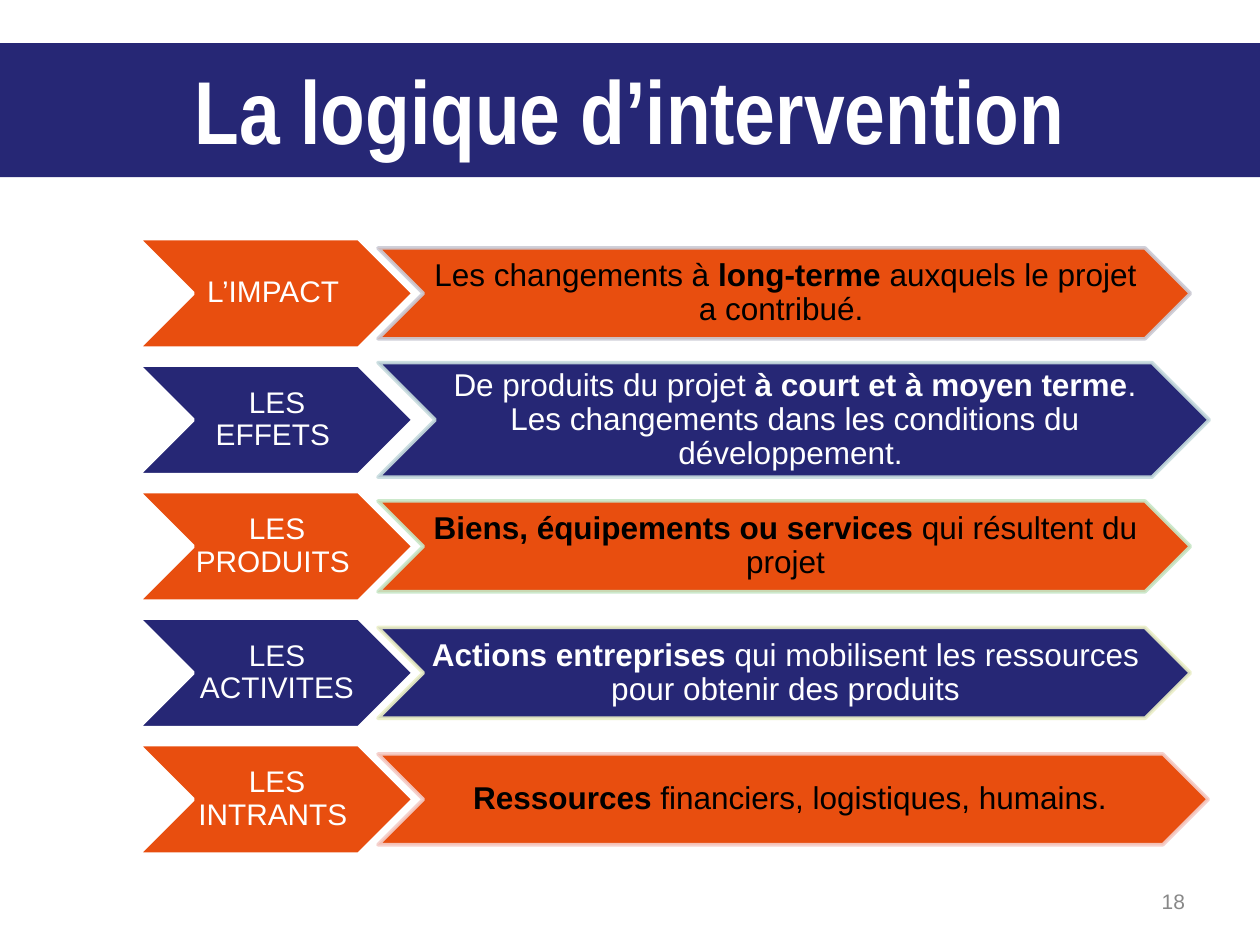
"""Build the slide on the logic of intervention with its five levels of chevrons."""
import pptx
import pptx.dml.color
import pptx.enum.shapes
import pptx.enum.text
import pptx.oxml.ns
import pptx.util
from lxml import etree

Cm = pptx.util.Cm
Pt = pptx.util.Pt
RGBColor = pptx.dml.color.RGBColor
ALIGN = pptx.enum.text.PP_ALIGN
ANCHOR = pptx.enum.text.MSO_ANCHOR

NAVY = RGBColor(0x26, 0x27, 0x75)
ORANGE = RGBColor(0xE8, 0x4E, 0x0F)
WHITE = RGBColor(0xFF, 0xFF, 0xFF)
BLACK = RGBColor(0x00, 0x00, 0x00)
GREY = RGBColor(0x88, 0x88, 0x88)
LILAC = RGBColor(0xCB, 0xCB, 0xD5)
TEAL = RGBColor(0xC7, 0xDC, 0xDE)
GREEN = RGBColor(0xC7, 0xE7, 0xC7)
YELLOW = RGBColor(0xEB, 0xEF, 0xC7)
PINK = RGBColor(0xF5, 0xCD, 0xC8)

LABEL_TOP, LABEL_HEIGHT, ROW_STEP = 4.81, 2.21, 2.55

LEVELS = [
    ("L’IMPACT ", LILAC, 16.38, 1.83,
     [("Les changements à ", False), ("long-terme", True),
      (" auxquels le projet a contribué. ", False)]),
    ("LES EFFETS ", TEAL, 16.76, 2.31,
     [("De produits du projet ", False), ("à court et à moyen terme", True),
      (". Les changements dans les conditions du développement. ", False)]),
    ("LES PRODUITS ", GREEN, 16.38, 1.83,
     [("Biens, équipements ou services ", True), ("qui résultent du projet", False)]),
    ("LES ACTIVITES", YELLOW, 16.38, 1.83,
     [("Actions entreprises ", True),
      ("qui mobilisent les ressources pour obtenir des produits", False)]),
    ("LES INTRANTS ", PINK, 16.74, 1.83,
     [("Ressources", True), (" financiers, logistiques, humains. ", False)]),
]


def set_font(paragraph, name, size, color):
    paragraph.font.name = name
    paragraph.font.size = Pt(size)
    paragraph.font.color.rgb = color


def add_chevron(left, middle, width, height, fill, outline, size, color, spans):
    chevron = slide.shapes.add_shape(
        pptx.enum.shapes.MSO_SHAPE.CHEVRON,
        Cm(left), Cm(middle - height / 2), Cm(width), Cm(height))
    chevron.shadow.inherit = False
    chevron.fill.solid()
    chevron.fill.fore_color.rgb = fill
    chevron.line.color.rgb = outline
    chevron.line.width = Pt(2)
    frame = chevron.text_frame
    frame.word_wrap = True
    frame.vertical_anchor = ANCHOR.MIDDLE
    frame.margin_left, frame.margin_right = Cm(0.05), Cm(0)
    frame.margin_top = frame.margin_bottom = Cm(0.03)
    paragraph = frame.paragraphs[0]
    paragraph.alignment = ALIGN.CENTER
    paragraph.line_spacing = 0.9
    set_font(paragraph, "Arial", size, color)
    for text, bold in spans:
        span = paragraph.add_run()
        span.text = text
        if bold:
            span.font.bold = True
    return chevron


deck = pptx.Presentation()
deck.slide_width = Cm(25.4)
deck.slide_height = Cm(19.05)
slide = deck.slides.add_slide(deck.slide_layouts[5])

title = slide.shapes.title
title.left, title.top, title.width, title.height = Cm(0), Cm(0.87), Cm(25.4), Cm(2.7)
title.fill.solid()
title.fill.fore_color.rgb = NAVY
title_frame = title.text_frame
title_frame.text = "La logique d’intervention"
title_frame.auto_size = pptx.enum.text.MSO_AUTO_SIZE.NONE
title_frame.vertical_anchor = ANCHOR.TOP
title_frame.margin_top = title_frame.margin_bottom = Cm(0.25)
title_para = title_frame.paragraphs[0]
title_para.alignment = ALIGN.CENTER
title_para.font.bold = True
set_font(title_para, "Arial Narrow", 51, WHITE)

for index, (label, outline, width, height, spans) in enumerate(LEVELS):
    middle = LABEL_TOP + LABEL_HEIGHT / 2 + index * ROW_STEP
    fill, color = (NAVY, WHITE) if index % 2 else (ORANGE, BLACK)
    add_chevron(2.79, middle, 5.54, LABEL_HEIGHT, fill, WHITE, 17, WHITE, [(label, False)])
    detail = add_chevron(7.62, middle, width, height, fill, outline, 18, color, spans)
    line_color = detail.line.fill.fore_color and detail.element.spPr.find(
        "a:ln/a:solidFill/a:srgbClr", {"a": pptx.oxml.ns.nsdecls("a").split('"')[1]})
    etree.SubElement(line_color, pptx.oxml.ns.qn("a:alpha"), val="90000")

number_box = slide.shapes.add_textbox(Cm(18.21), Cm(17.65), Cm(5.93), Cm(1.02))
number_frame = number_box.text_frame
number_frame.word_wrap = True
number_frame.vertical_anchor = ANCHOR.MIDDLE
number_frame.text = "18"
number_para = number_frame.paragraphs[0]
number_para.alignment = ALIGN.RIGHT
set_font(number_para, "Arial", 12, GREY)

deck.save("out.pptx")
